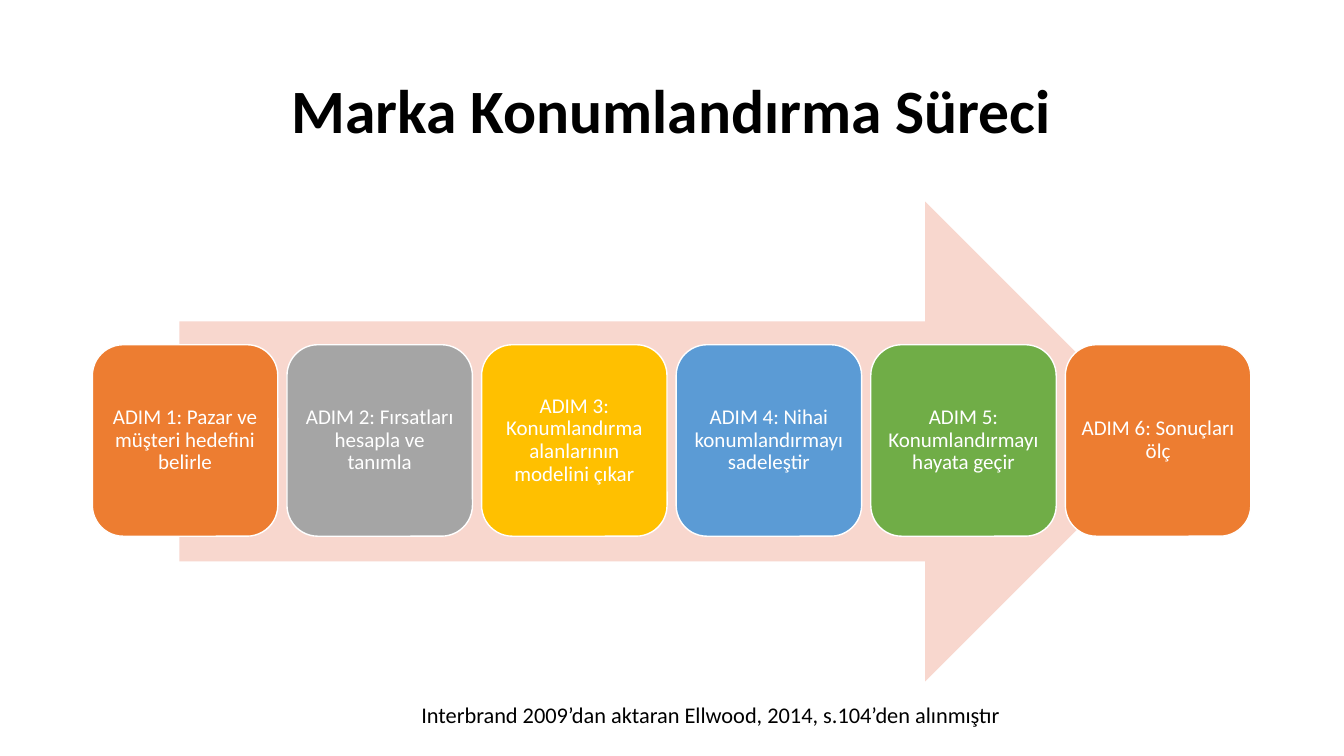
from pptx import Presentation
from pptx.dml.color import RGBColor
from pptx.enum.shapes import MSO_SHAPE
from pptx.enum.text import MSO_ANCHOR, PP_ALIGN
from pptx.util import Pt

COLORS = {
    "black": "000000",
    "white": "FFFFFF",
    "blush": "F8D7CE",
    "orange": "ED7D31",
    "gray": "A5A5A5",
    "gold": "FFC000",
    "blue": "5B9BD5",
    "green": "70AD47",
}
STEPS = [
    ("ADIM 1: Pazar ve müşteri hedefini belirle", "orange"),
    ("ADIM 2: Fırsatları hesapla ve tanımla", "gray"),
    ("ADIM 3: Konumlandırma alanlarının modelini çıkar", "gold"),
    ("ADIM 4: Nihai konumlandırmayı sadeleştir", "blue"),
    ("ADIM 5: Konumlandırmayı hayata geçir", "green"),
    ("ADIM 6: Sonuçları ölç", "orange"),
]
CARD_LEFT, CARD_TOP, CARD_WIDTH, CARD_HEIGHT = 66, 246.24, 132.5, 136.8
CARD_PITCH = 139


class SlideBuilder:
    """Draws styled elements on one slide, measured in points."""

    font = "Calibri"

    def __init__(self, slide):
        self.slide = slide

    def color(self, name):
        return RGBColor.from_string(COLORS[name])

    def set_text(self, sp, text, size, color, bold=False, spacing=1.0):
        tf = sp.text_frame
        tf.word_wrap = True
        tf.vertical_anchor = MSO_ANCHOR.MIDDLE
        p = tf.paragraphs[0]
        p.text = text
        p.alignment = PP_ALIGN.CENTER
        p.line_spacing = spacing
        p.font.name = self.font
        p.font.size = Pt(size)
        p.font.bold = bold
        p.font.color.rgb = self.color(color)

    def text(self, box, text, size, **style):
        sp = self.slide.shapes.add_textbox(*map(Pt, box))
        self.set_text(sp, text, size, "black", **style)

    def shape(self, kind, box, fill, line=None):
        sp = self.slide.shapes.add_shape(kind, *map(Pt, box))
        sp.shadow.inherit = False
        sp.fill.solid()
        sp.fill.fore_color.rgb = self.color(fill)
        if line:
            sp.line.color.rgb = self.color(line)
            sp.line.width = Pt(1)
        else:
            sp.line.fill.background()
        return sp

    def card(self, box, text, fill):
        sp = self.shape(MSO_SHAPE.ROUNDED_RECTANGLE, box, fill, "white")
        tf = sp.text_frame
        tf.margin_left = tf.margin_right = tf.margin_top = tf.margin_bottom = Pt(4.5)
        self.set_text(sp, text, 15, "white", spacing=0.9)


def main():
    prs = Presentation()
    prs.slide_width, prs.slide_height = Pt(960), Pt(540)
    s = SlideBuilder(prs.slides.add_slide(prs.slide_layouts[6]))
    s.text((66, 28.8, 828, 104.4), "Marka Konumlandırma Süreci", 44, bold=True, spacing=0.9)
    s.shape(MSO_SHAPE.RIGHT_ARROW, (128.2, 144, 704, 342.7), "blush")
    for i, (label, fill) in enumerate(STEPS):
        s.card((CARD_LEFT + i * CARD_PITCH, CARD_TOP, CARD_WIDTH, CARD_HEIGHT), label, fill)
    s.text(
        (85, 496.8, 845.3, 26.6),
        "Interbrand 2009’dan aktaran Ellwood, 2014, s.104’den alınmıştır",
        16,
    )
    prs.save("out.pptx")


if __name__ == "__main__":
    main()
